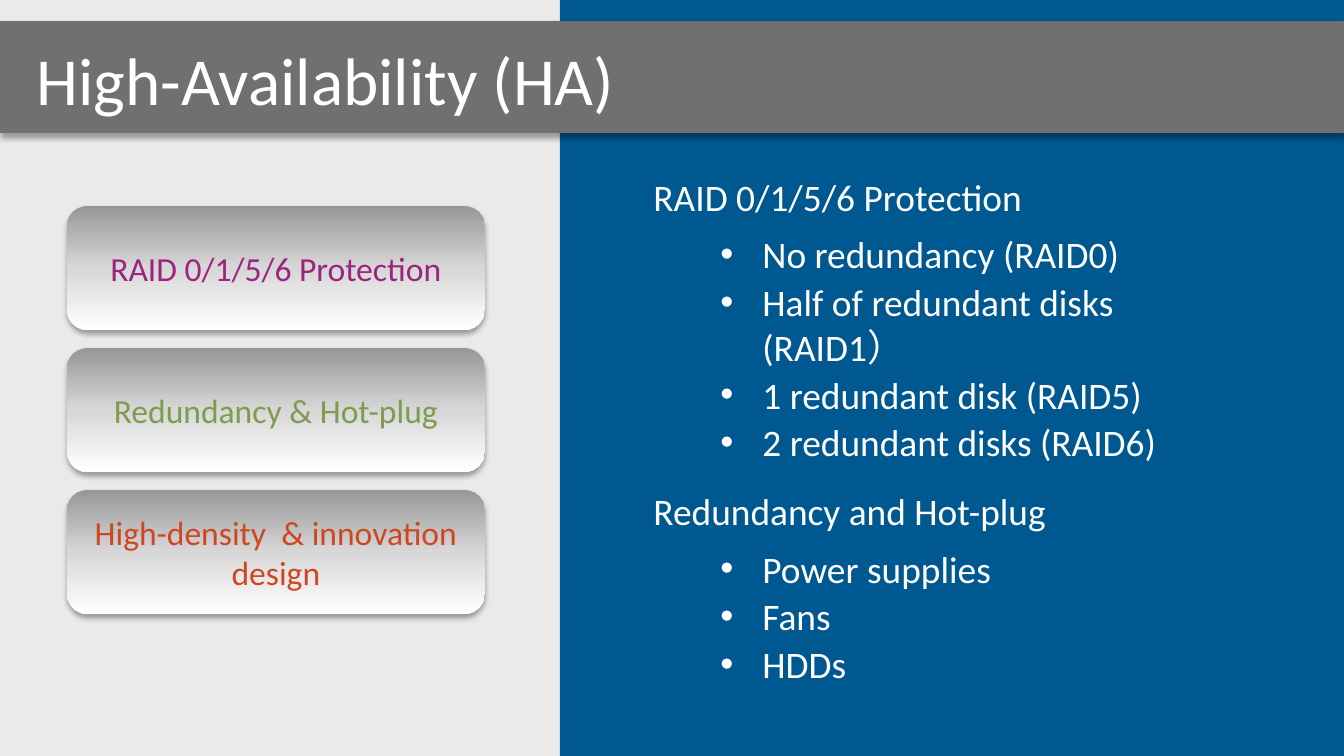
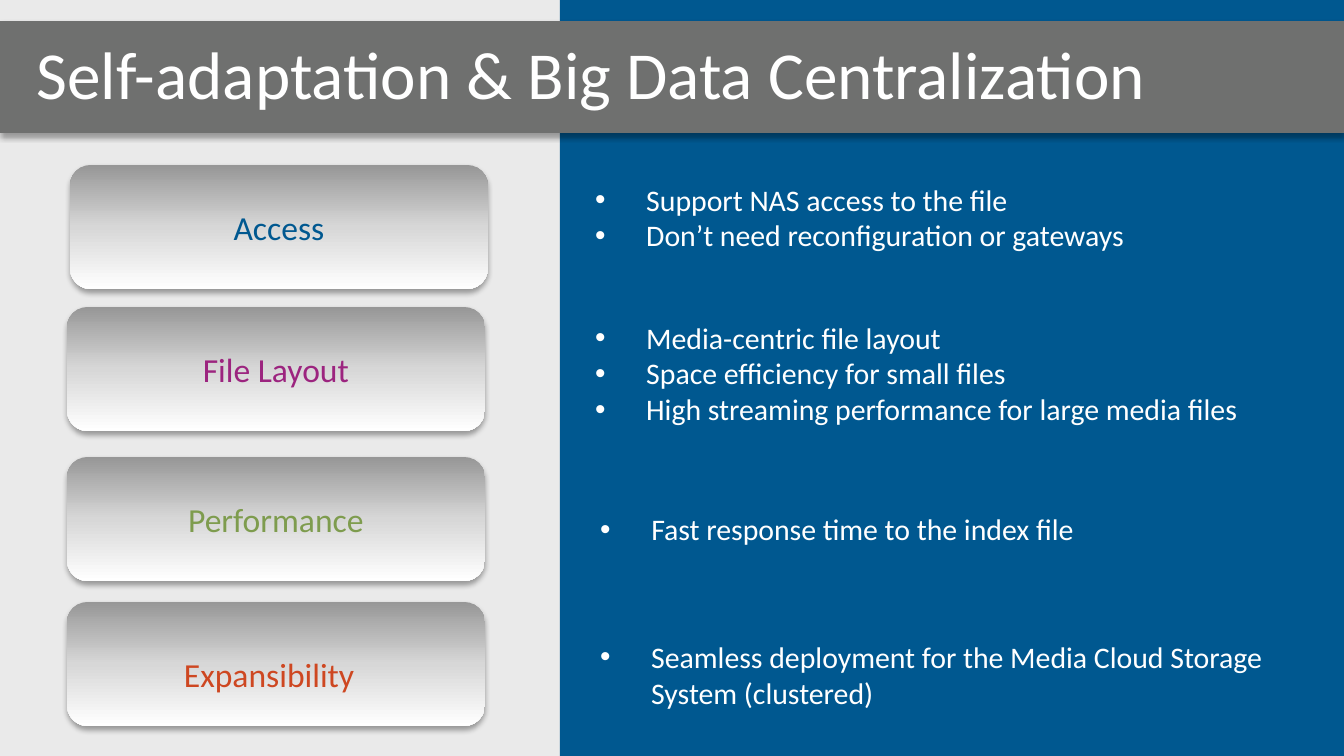
from pptx import Presentation
from pptx.dml.color import RGBColor
from pptx.enum.shapes import MSO_SHAPE
from pptx.enum.text import MSO_ANCHOR, MSO_AUTO_SIZE, PP_ALIGN
from pptx.oxml import parse_xml
from pptx.oxml.ns import nsdecls, qn
from pptx.util import Emu, Pt

RECT = MSO_SHAPE.RECTANGLE
ROUNDED = MSO_SHAPE.ROUNDED_RECTANGLE
MIDDLE = MSO_ANCHOR.MIDDLE
LEFT, CENTER = PP_ALIGN.LEFT, PP_ALIGN.CENTER
NO_FIT = MSO_AUTO_SIZE.NONE

PX = 914400 / 134.4
WIDTH, HEIGHT = 1344, 756
FONT = "Calibri"
COLORS = {
    "white": "FFFFFF",
    "pale": "EAEAEA",
    "blue": "005890",
    "band": "6F706F",
    "purple": "9C247F",
    "green": "7E9C4E",
    "orange": "CE4721",
    "dark": "4A4B4A",
}
BUTTON_GRADIENT = [(0, "979797"), (50, "D7D7D7"), (100, "FFFFFF")]
BUTTON_SIZE = (418, 124)


def add_block(page, kind, box, fill=None, shadow=True):
    """Add a borderless shape; without a fill colour it gets the button gradient."""
    shape = page.shapes.add_shape(kind, *[Emu(round(n * PX)) for n in box])
    properties = shape.element.spPr
    if fill:
        shape.fill.solid()
        shape.fill.fore_color.rgb = RGBColor.from_string(COLORS[fill])
    else:
        stops = "".join(
            f'<a:gs pos="{position * 1000}"><a:srgbClr val="{color}"/></a:gs>'
            for position, color in BUTTON_GRADIENT)
        properties.append(parse_xml(
            f'<a:gradFill {nsdecls("a")} rotWithShape="1"><a:gsLst>{stops}</a:gsLst>'
            '<a:lin ang="5400000" scaled="0"/></a:gradFill>'))
    shape.line.fill.background()
    shape.shadow.inherit = False
    if shadow:
        properties.find(qn("a:effectLst")).append(parse_xml(
            f'<a:outerShdw {nsdecls("a")} blurRad="{Pt(3.1)}" dist="{Pt(1.8)}" '
            'dir="5400000" rotWithShape="0"><a:srgbClr val="000000">'
            '<a:alpha val="35000"/></a:srgbClr></a:outerShdw>'))
    return shape


def write(para, runs, align=LEFT, before=0, after=0, margin=0, hanging=0):
    """Fill a paragraph with (text, size, colour) runs; a hanging indent adds a bullet."""
    settings = para._p.get_or_add_pPr()
    settings.set("marL", str(round(margin * PX)))
    settings.set("indent", str(round(-hanging * PX)))
    if hanging:
        settings.append(parse_xml(f'<a:buFont {nsdecls("a")} typeface="Arial"/>'))
        settings.append(parse_xml(f'<a:buChar {nsdecls("a")} char="•"/>'))
    else:
        settings.append(parse_xml(f'<a:buNone {nsdecls("a")}/>'))
    para.alignment = align
    para.space_before, para.space_after = Pt(before), Pt(after)
    for text, size, color in runs:
        span = para.add_run()
        span.text = text
        span.font.name = FONT
        span.font.size = Pt(size)
        span.font.color.rgb = RGBColor.from_string(COLORS[color])


deck = Presentation()
deck.slide_width = Emu(round(WIDTH * PX))
deck.slide_height = Emu(round(HEIGHT * PX))
availability = deck.slides.add_slide(deck.slide_layouts[1])
adaptation = deck.slides.add_slide(deck.slide_layouts[5])

# Shared panels and title band, moved to the back of the slide master
backdrop = [
    ((0, 0, WIDTH, HEIGHT), "pale", False),
    ((560, 0, WIDTH - 560, HEIGHT), "blue", False),
    ((0, 21, WIDTH, 112), "band", True),
]
for order, (box, fill, shadow) in enumerate(backdrop):
    panel = add_block(availability, RECT, box, fill, shadow).element
    panel.nvSpPr.cNvPr.set("id", str(101 + order))
    deck.slide_master.shapes.element.insert(2 + order, panel)

# Titles
titles = [
    (availability, 34, "High-Availability (HA)"),
    (adaptation, 28, "Self-adaptation & Big Data Centralization"),
]
for page, top, text in titles:
    title = page.shapes.title
    title.left, title.top, title.width, title.height = [
        Emu(round(n * PX)) for n in (23, top, 1300, 90)]
    frame = title.text_frame
    frame.auto_size, frame.vertical_anchor = NO_FIT, MIDDLE
    write(frame.paragraphs[0], [(text, 36, "white")])

# Buttons in the left panel
buttons = [
    (availability, 67, 206, [("RAID 0/1/5/6 Protection", 18, "purple")]),
    (availability, 67, 348, [("Redundancy & Hot-plug", 18, "green")]),
    (availability, 67, 490, [("High-density  & innovation design", 18, "orange")]),
    (adaptation, 70, 165, [("Access", 18, "blue")]),
    (adaptation, 67, 307, [("File Layout", 18, "purple")]),
    (adaptation, 67, 457, [("Performance", 18, "green")]),
    (adaptation, 67, 602, [("Expansibility", 18, "orange"), (" ", 32, "dark")]),
]
for page, left, top, runs in buttons:
    button = add_block(page, ROUNDED, (left, top, *BUTTON_SIZE))
    button.text_frame.vertical_anchor = MIDDLE
    write(button.text_frame.paragraphs[0], runs, CENTER)

# Two-level list of the availability slide
body = availability.placeholders[1]
body.left, body.top, body.width, body.height = [
    Emu(round(n * PX)) for n in (640, 190, 636, 480)]
frame = body.text_frame
frame.auto_size, frame.vertical_anchor = NO_FIT, MIDDLE
sections = [
    ("RAID 0/1/5/6 Protection", [
        "No redundancy (RAID0)",
        "Half of redundant disks (RAID1）",
        "1 redundant disk (RAID5)",
        "2 redundant disks (RAID6)",
    ]),
    ("Redundancy and Hot-plug", ["Power supplies", "Fans", "HDDs"]),
]
for number, (heading, items) in enumerate(sections):
    para = frame.add_paragraph() if number else frame.paragraphs[0]
    write(para, [(heading, 20, "white")], before=12 if number else 0, after=6)
    for item in items:
        para = frame.add_paragraph()
        para.level = 1
        write(para, [(item, 20, "white")], before=0.8, after=0.8, margin=109, hanging=42)

# Lists beside the buttons of the adaptation slide
lists = [
    ((582, 181, 762, 72), [
        "Support NAS access to the file",
        "Don’t need reconfiguration or gateways",
    ]),
    ((582, 289, 762, 168), [
        "Media-centric file layout",
        "Space efficiency for small files",
        "High streaming performance for large media files",
    ]),
    ((587, 445, 742, 168), ["Fast response time to the index file"]),
    ((587, 612, 757, 125), [
        "Seamless deployment for the Media Cloud Storage System (clustered)",
    ]),
]
for box, items in lists:
    frame = adaptation.shapes.add_textbox(*[Emu(round(n * PX)) for n in box]).text_frame
    frame.word_wrap, frame.vertical_anchor = True, MIDDLE
    for number, item in enumerate(items):
        para = frame.add_paragraph() if number else frame.paragraphs[0]
        write(para, [(item, 16, "white")], margin=51, hanging=51)

deck.save("out.pptx")
